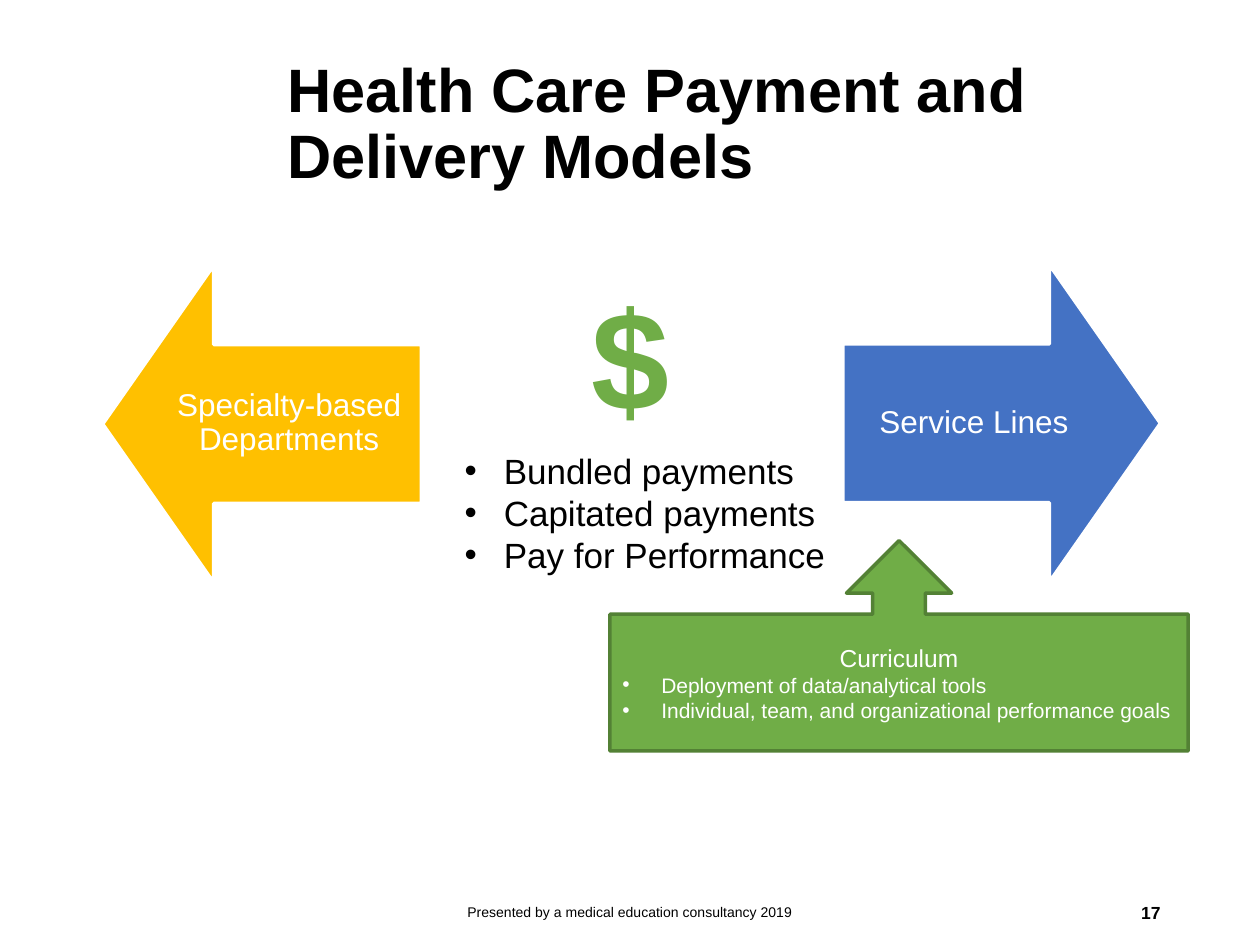
from typing import NamedTuple

from lxml.etree import SubElement
from pptx import Presentation
from pptx.dml.color import RGBColor
from pptx.enum.shapes import MSO_SHAPE as Shape
from pptx.enum.text import MSO_ANCHOR as Anchor, MSO_AUTO_SIZE as AutoSize, PP_ALIGN as Align
from pptx.oxml import parse_xml
from pptx.oxml.ns import nsdecls, qn
from pptx.util import Inches, Pt

BLACK = RGBColor(0x00, 0x00, 0x00)
WHITE = RGBColor(0xFF, 0xFF, 0xFF)
GOLD = RGBColor(0xFF, 0xC0, 0x00)
BLUE = RGBColor(0x44, 0x72, 0xC4)
GREEN = RGBColor(0x70, 0xAD, 0x47)
DARK_GREEN = RGBColor(0x53, 0x81, 0x35)
FONT = "Arial"


class Area(NamedTuple):
    left: float
    top: float
    width: float
    height: float

    def lengths(self) -> list:
        return [Inches(value) for value in self]


class Line(NamedTuple):
    text: str
    size: float
    color: RGBColor = BLACK
    bold: bool = False
    align: Align = Align.LEFT
    bullet: bool = False
    spacing: float = 1.0


class Direction(NamedTuple):
    label: str
    color: RGBColor
    rotation: int
    arrow: Area
    label_area: Area


def add_bullet(para) -> None:
    properties = para._p.get_or_add_pPr()
    properties.set("marL", str(Inches(0.31)))
    properties.set("indent", str(-Inches(0.31)))
    SubElement(properties, qn("a:buFont")).set("typeface", FONT)
    SubElement(properties, qn("a:buChar")).set("char", "•")


def write(frame, lines: list[Line], anchor: Anchor = Anchor.MIDDLE,
          margin: tuple[float, float] = (0.1, 0.05)) -> None:
    frame.word_wrap = True
    frame.auto_size = AutoSize.NONE
    frame.vertical_anchor = anchor
    frame.margin_left = frame.margin_right = Inches(margin[0])
    frame.margin_top = frame.margin_bottom = Inches(margin[1])
    for index, line in enumerate(lines):
        para = frame.add_paragraph() if index else frame.paragraphs[0]
        if line.bullet:
            add_bullet(para)
        para.alignment = line.align
        para.line_spacing = line.spacing
        para.space_before = Pt(0)
        span = para.add_run()
        span.text = line.text
        span.font.name = FONT
        span.font.size = Pt(line.size)
        span.font.bold = line.bold
        span.font.color.rgb = line.color


def add_text(page, area: Area, lines: list[Line], **options):
    box = page.shapes.add_textbox(*area.lengths())
    write(box.text_frame, lines, **options)
    return box


def add_block(page, kind: Shape, area: Area, fill: RGBColor, outline: RGBColor):
    block = page.shapes.add_shape(kind, *area.lengths())
    block.shadow.inherit = False
    block.fill.solid()
    block.fill.fore_color.rgb = fill
    block.line.color.rgb = outline
    block.line.width = Pt(2)
    return block


def add_direction(page, direction: Direction) -> None:
    arrow = add_block(page, Shape.UP_ARROW, direction.arrow, direction.color, WHITE)
    arrow.rotation = direction.rotation
    arrow.adjustments[0] = 0.5
    arrow.adjustments[1] = 0.35
    label = Line(direction.label, 18, WHITE, align=Align.CENTER, spacing=0.9)
    add_text(page, direction.label_area, [label], margin=(0.14, 0.14))


def outline_text(span, color: RGBColor, width: float) -> None:
    line = parse_xml(f'<a:ln {nsdecls("a")} w="{Pt(width)}"><a:solidFill>'
                     f'<a:srgbClr val="{color}"/></a:solidFill></a:ln>')
    span.font._element.insert(0, line)


def main() -> None:
    deck = Presentation()
    deck.slide_width, deck.slide_height = Inches(10), Inches(7.5)
    page = deck.slides.add_slide(deck.slide_layouts[5])

    # Title
    title = page.shapes.title
    title.left, title.top, title.width, title.height = Area(2.18, 0.27, 7.14, 1.45).lengths()
    write(title.text_frame,
          [Line("Health Care Payment and Delivery Models", 35, bold=True, spacing=0.9)])

    # Opposing arrows
    for direction in (
        Direction("Specialty-based Departments", GOLD, 270,
                  Area(0.82, 2.1, 2.52, 2.53), Area(1.25, 2.73, 2.09, 1.26)),
        Direction("Service Lines", BLUE, 90,
                  Area(6.69, 2.1, 2.52, 2.52), Area(6.69, 2.73, 2.08, 1.26)),
    ):
        add_direction(page, direction)

    # Payment models and dollar sign
    models = ("Bundled payments", "Capitated payments", "Pay for Performance")
    add_text(page, Area(3.59, 3.52, 3.07, 1.11),
             [Line(model, 20, bullet=True) for model in models], anchor=Anchor.TOP)
    dollar = add_text(page, Area(3.84, 2.1, 2.32, 1.45),
                      [Line("$", 80, GREEN, bold=True, align=Align.CENTER)], anchor=Anchor.TOP)
    outline_text(dollar.text_frame.paragraphs[0].runs[0], WHITE, 0.75)

    # Curriculum callout
    callout = add_block(page, Shape.UP_ARROW_CALLOUT, Area(4.84, 4.29, 4.59, 1.67),
                        GREEN, DARK_GREEN)
    goals = ("Deployment of data/analytical tools",
             "Individual, team, and organizational performance goals")
    write(callout.text_frame,
          [Line("Curriculum", 14, WHITE, align=Align.CENTER)]
          + [Line(goal, 12, WHITE, bullet=True) for goal in goals])

    # Footer and page number
    add_text(page, Area(3.31, 7.04, 3.38, 0.4),
             [Line("Presented by a medical education consultancy 2019", 8,
                   align=Align.CENTER)])
    add_text(page, Area(7.06, 7.04, 2.25, 0.4),
             [Line("17", 10, bold=True, align=Align.RIGHT)])

    deck.save("out.pptx")


if __name__ == "__main__":
    main()
